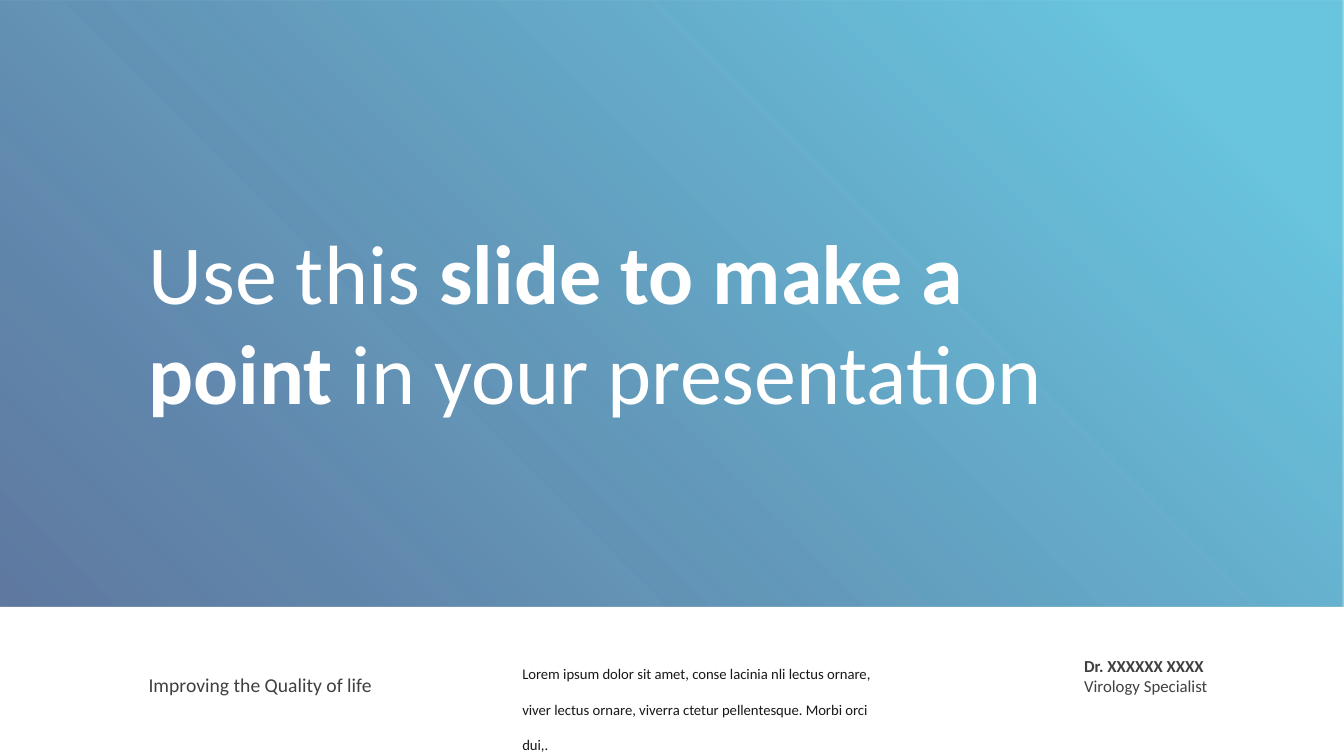
from dataclasses import dataclass

from pptx import Presentation
from pptx.dml.color import RGBColor
from pptx.enum.shapes import MSO_SHAPE
from pptx.enum.text import MSO_AUTO_SIZE
from pptx.oxml import parse_xml
from pptx.oxml.ns import nsdecls
from pptx.util import Pt

PX = 9525
SLIDE_WIDTH, SLIDE_HEIGHT, HERO_HEIGHT = 1280, 720, 578
MARGIN = 132


@dataclass(frozen=True)
class Theme:
    font: str = "Calibri"
    white: str = "FFFFFF"
    grey: str = "404040"
    ink: str = "181818"
    gradient: tuple = ((12, "33AFD2", 73), (100, "002060", 62))
    title: float = 60
    tagline: float = 14
    speaker: float = 12
    body: float = 10.5


THEME = Theme()


def add_panel(page, box):
    panel = page.shapes.add_shape(MSO_SHAPE.RECTANGLE, *(n * PX for n in box))
    panel.shadow.inherit = False
    panel.line.fill.background()
    return panel


def add_text(page, box, paragraphs, size, color, spacing=None):
    text_box = page.shapes.add_textbox(*(n * PX for n in box))
    frame = text_box.text_frame
    frame.word_wrap = True
    frame.auto_size = MSO_AUTO_SIZE.SHAPE_TO_FIT_TEXT
    for index, spans in enumerate(paragraphs):
        para = frame.add_paragraph() if index else frame.paragraphs[0]
        if spacing:
            para.line_spacing = spacing
        for text, bold in spans:
            span = para.add_run()
            span.text = text
            span.font.name = THEME.font
            span.font.size = Pt(size)
            span.font.bold = bold
            span.font.color.rgb = RGBColor.from_string(color)


def add_backdrop(page, box):
    panel = add_panel(page, box)
    stops = "".join(
        f'<a:gs pos="{position * 1000}"><a:srgbClr val="{color}">'
        f'<a:alpha val="{alpha * 1000}"/></a:srgbClr></a:gs>'
        for position, color, alpha in THEME.gradient
    )
    gradient = parse_xml(
        f'<a:gradFill {nsdecls("a")} rotWithShape="1"><a:gsLst>{stops}</a:gsLst>'
        '<a:path path="circle"><a:fillToRect l="100000" b="100000"/></a:path>'
        "</a:gradFill>"
    )
    panel.fill.background()
    properties = panel.element.spPr
    blank_fill = properties.find("{*}noFill")
    properties.replace(blank_fill, gradient)


def add_headline(page, box):
    left, top, width, height = box
    spans = [
        ("Use this ", False),
        ("slide to make a point ", True),
        ("in your presentation", False),
    ]
    add_text(page, (left + MARGIN, top + 205, 915, 204), [spans],
             THEME.title, THEME.white)


def add_footer(page, box):
    left, top, width, height = box
    panel = add_panel(page, box)
    panel.fill.solid()
    panel.fill.fore_color.rgb = RGBColor.from_string(THEME.white)
    add_text(page, (left + MARGIN, top + 58, 263, 32),
             [[("Improving the Quality of life", False)]],
             THEME.tagline, THEME.grey)
    add_text(page, (left + 488, top + 34, 370, 73),
             [[("Lorem ipsum dolor sit amet, conse lacinia nli lectus ornare, "
                "viver lectus ornare, viverra ctetur pellentesque. "
                "Morbi orci dui,.", False)]],
             THEME.body, THEME.ink, spacing=2.0)
    add_text(page, (left + 1023, top + 42, 211, 48),
             [[("Dr. XXXXXX XXXX", True)], [("Virology Specialist", False)]],
             THEME.speaker, THEME.grey)


def main():
    deck = Presentation()
    deck.slide_width = SLIDE_WIDTH * PX
    deck.slide_height = SLIDE_HEIGHT * PX
    page = deck.slides.add_slide(deck.slide_layouts[6])
    add_backdrop(page, (0, 0, SLIDE_WIDTH, SLIDE_HEIGHT))
    add_headline(page, (0, 0, SLIDE_WIDTH, HERO_HEIGHT))
    add_footer(page, (0, HERO_HEIGHT, SLIDE_WIDTH, SLIDE_HEIGHT - HERO_HEIGHT))
    deck.save("out.pptx")


if __name__ == "__main__":
    main()
